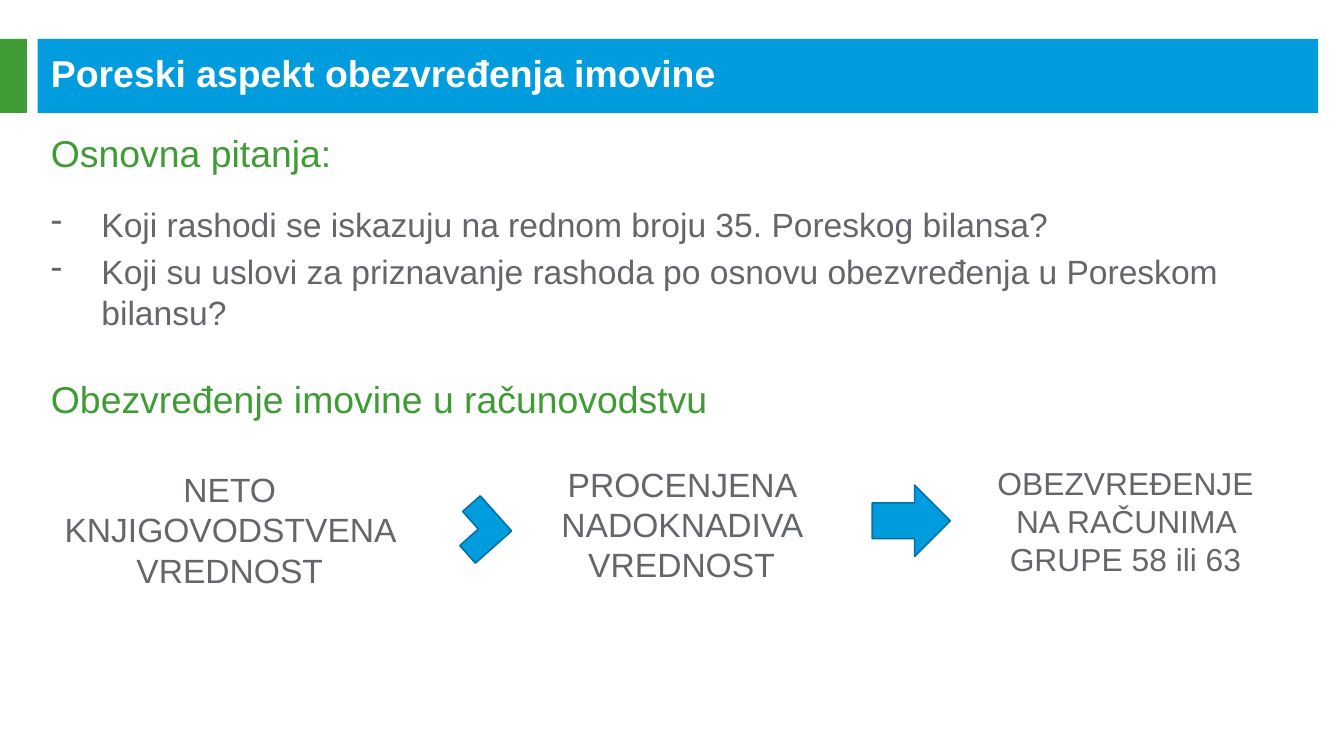
import pptx
import pptx.util
import pptx.dml.color
import pptx.enum.shapes
import pptx.enum.text
from dataclasses import dataclass
from lxml import etree

Pt = pptx.util.Pt
SHAPE = pptx.enum.shapes.MSO_SHAPE
ALIGN = pptx.enum.text.PP_ALIGN
ANCHOR = pptx.enum.text.MSO_ANCHOR


@dataclass(frozen=True)
class Theme:
    font: str = "Arial"
    blue: str = "009CDE"
    edge: str = "0073A4"
    green: str = "3F9C35"
    gray: str = "63666A"
    white: str = "FFFFFF"
    heading: int = 20
    body: int = 18
    small: int = 17
    edge_width: float = 0.85
    gap: float = 0.2
    indent: int = 27


THEME = Theme()
LEFT, WIDTH = 20.2, 686
BAR_TOP, BAR_HEIGHT = 20.9, 39.6

TITLE = "Poreski aspekt obezvređenja imovine"
QUESTIONS_HEADING = "Osnovna pitanja:"
QUESTIONS = [
    "Koji rashodi se iskazuju na rednom broju 35. Poreskog bilansa?",
    "Koji su uslovi za priznavanje rashoda po osnovu obezvređenja u Poreskom bilansu?",
]
ACCOUNTING_HEADING = "Obezvređenje imovine u računovodstvu"
BARS = [
    ((LEFT, BAR_TOP, WIDTH, BAR_HEIGHT), THEME.blue),
    ((0, BAR_TOP, 14.4, BAR_HEIGHT), THEME.green),
]
STEPS = [
    ("NETO KNJIGOVODSTVENA VREDNOST", (25.2, 247.7, 195.8, 72.7), THEME.body),
    ("PROCENJENA NADOKNADIVA VREDNOST", (290.2, 244.8, 149.8, 72.7), THEME.body),
    ("OBEZVREĐENJE NA RAČUNIMA GRUPE 58 ili 63", (525.6, 244.8, 154.8, 69.1), THEME.small),
]
SIGNS = [
    (SHAPE.CORNER, (243.4, 270.7, 25.2, 25.9), 228.3),
    (SHAPE.RIGHT_ARROW, (467.3, 259.9, 41.8, 38.2), 0),
]


def rgb(value):
    return pptx.dml.color.RGBColor.from_string(value)


def add_block(s, kind, box, fill, edge=None, rotation=0):
    sp = s.shapes.add_shape(kind, *map(Pt, box))
    sp.shadow.inherit = False
    sp.rotation = rotation
    sp.fill.solid()
    sp.fill.fore_color.rgb = rgb(fill)
    if edge:
        sp.line.color.rgb = rgb(edge)
        sp.line.width = Pt(THEME.edge_width)
    else:
        sp.line.fill.background()


def add_text_box(s, box, anchor=ANCHOR.TOP):
    tf = s.shapes.add_textbox(*map(Pt, box)).text_frame
    tf.word_wrap = True
    tf.vertical_anchor = anchor
    return tf


def write(p, text, size, color, bold=False, align=ALIGN.LEFT):
    p.alignment = align
    r = p.add_run()
    r.text = text
    r.font.name = THEME.font
    r.font.size = Pt(size)
    r.font.bold = bold
    r.font.color.rgb = rgb(color)


def add_dash(p):
    pPr = p._p.get_or_add_pPr()
    pPr.set("marL", str(Pt(THEME.indent)))
    pPr.set("indent", str(-Pt(THEME.indent)))
    bullet = etree.SubElement(pPr, pptx.oxml.ns.qn("a:buChar"))
    bullet.set("char", "-")


prs = pptx.Presentation()
prs.slide_width, prs.slide_height = Pt(720), Pt(405)
s = prs.slides.add_slide(prs.slide_layouts[6])

for box, fill in BARS:
    add_block(s, SHAPE.RECTANGLE, box, fill)

tf = add_text_box(s, (LEFT, 28.1, 680.4, 21.6), ANCHOR.MIDDLE)
write(tf.paragraphs[0], TITLE, THEME.heading, THEME.white, bold=True)

tf = add_text_box(s, (LEFT, 66.2, WIDTH, 121))
write(tf.paragraphs[0], QUESTIONS_HEADING, THEME.heading, THEME.green)
tf.paragraphs[0].space_after = Pt(12)
for question in QUESTIONS:
    p = tf.add_paragraph()
    add_dash(p)
    p.space_before = Pt(THEME.gap * THEME.body)
    write(p, question, THEME.body, THEME.gray)

tf = add_text_box(s, (LEFT, 198, WIDTH, 38.2))
write(tf.paragraphs[0], ACCOUNTING_HEADING, THEME.heading, THEME.green)

for text, box, size in STEPS:
    tf = add_text_box(s, box)
    write(tf.paragraphs[0], text, size, THEME.gray, align=ALIGN.CENTER)

for kind, box, rotation in SIGNS:
    add_block(s, kind, box, THEME.blue, THEME.edge, rotation)

prs.save("out.pptx")
